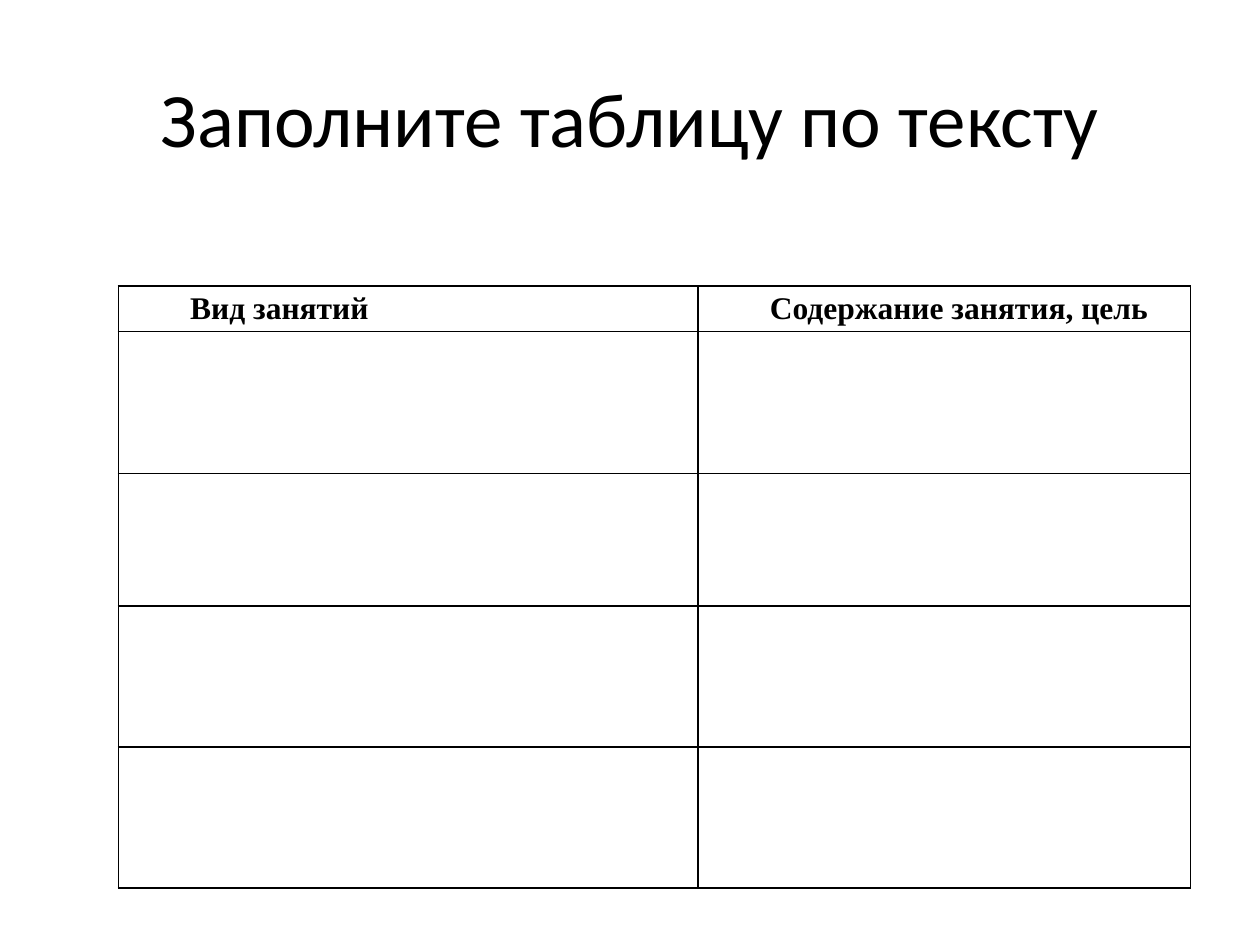
"""Build a slide with a title and an empty table for pupils to fill in."""
from dataclasses import dataclass

from lxml import etree
from pptx import Presentation
from pptx.dml.color import RGBColor
from pptx.enum.text import MSO_ANCHOR, PP_ALIGN
from pptx.oxml.ns import qn
from pptx.util import Inches, Pt

MIDDLE = MSO_ANCHOR.MIDDLE
CENTER = PP_ALIGN.CENTER
JUSTIFY = PP_ALIGN.JUSTIFY
BLACK = "000000"
WHITE = "FFFFFF"
TITLE_ONLY = 5
BORDER_SIDES = ("a:lnL", "a:lnR", "a:lnT", "a:lnB")
ROW_HEIGHTS = (0.36, 1.13, 1.05, 1.12, 1.12)


@dataclass(frozen=True)
class Column:
    heading: str
    width: float


@dataclass(frozen=True)
class TextStyle:
    font: str
    size: float
    bold: bool = False


COLUMNS = (Column("Вид занятий", 4.6), Column("Содержание занятия, цель", 3.91))
TITLE_STYLE = TextStyle("Calibri", 44)
HEADING_STYLE = TextStyle("Times New Roman", 18, True)


def color(value: str) -> RGBColor:
    return RGBColor.from_string(value)


def add_span(paragraph, text: str, style: TextStyle) -> None:
    span = paragraph.add_run()
    span.text = text
    span.font.name = style.font
    span.font.size = Pt(style.size)
    span.font.bold = style.bold
    span.font.color.rgb = color(BLACK)


def add_title(page, text: str) -> None:
    box = page.shapes.title
    box.left, box.top = Inches(0.5), Inches(0.3)
    box.width, box.height = Inches(9), Inches(1.25)
    box.text_frame.vertical_anchor = MIDDLE
    paragraph = box.text_frame.paragraphs[0]
    paragraph.alignment = CENTER
    add_span(paragraph, text, TITLE_STYLE)


def format_cell(cell) -> None:
    cell.margin_left = cell.margin_right = Inches(0.07)
    cell.margin_top = cell.margin_bottom = 0
    properties = cell._tc.get_or_add_tcPr()
    for side in BORDER_SIDES:
        line = etree.SubElement(properties, qn(side), w=str(Pt(1)))
        fill = etree.SubElement(line, qn("a:solidFill"))
        etree.SubElement(fill, qn("a:srgbClr"), val=BLACK)
    cell.fill.solid()
    cell.fill.fore_color.rgb = color(WHITE)


def add_heading(cell, text: str) -> None:
    paragraph = cell.text_frame.paragraphs[0]
    paragraph.alignment = JUSTIFY
    paragraph.line_spacing = 1.15
    paragraph._p.get_or_add_pPr().set("marL", str(Inches(0.5)))
    add_span(paragraph, text, HEADING_STYLE)


def add_lesson_table(page) -> None:
    width = sum(column.width for column in COLUMNS)
    frame = page.shapes.add_table(
        len(ROW_HEIGHTS), len(COLUMNS),
        Inches(0.94), Inches(2.27), Inches(width), Inches(sum(ROW_HEIGHTS)),
    )
    table = frame.table
    table.first_row = table.horz_banding = False
    for row, height in zip(table.rows, ROW_HEIGHTS):
        row.height = Inches(height)
    for cell in table.iter_cells():
        format_cell(cell)
    for index, column in enumerate(COLUMNS):
        table.columns[index].width = Inches(column.width)
        add_heading(table.cell(0, index), column.heading)


def main() -> None:
    deck = Presentation()
    deck.slide_width, deck.slide_height = Inches(10), Inches(7.5)
    page = deck.slides.add_slide(deck.slide_layouts[TITLE_ONLY])
    add_title(page, "Заполните таблицу по тексту")
    add_lesson_table(page)
    deck.save("out.pptx")


if __name__ == "__main__":
    main()
